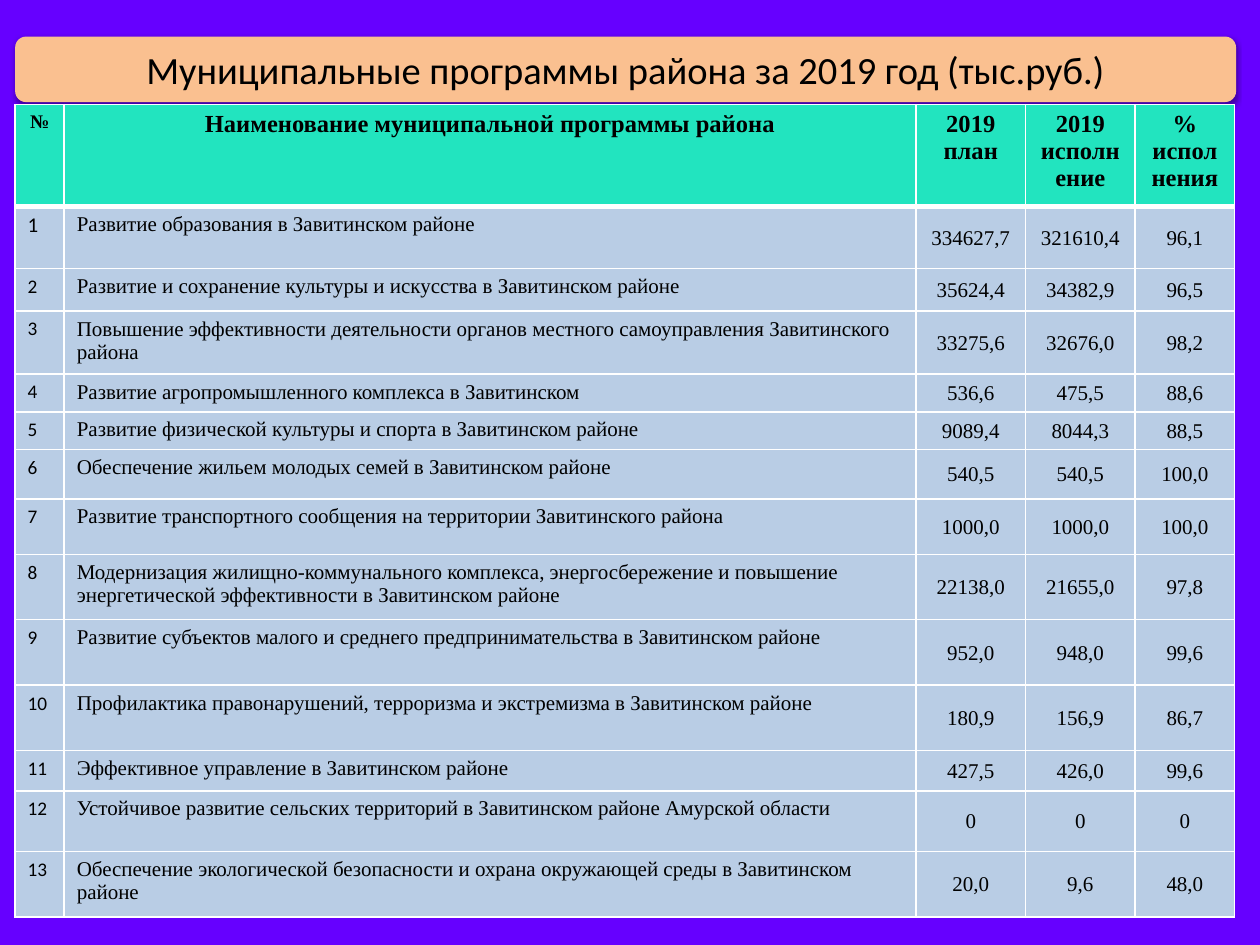
"""Build a slide with a table of district municipal programmes for 2019."""
from lxml import etree
from pptx import Presentation
from pptx import util as u
from pptx.dml.color import RGBColor
from pptx.enum import shapes, text
from pptx.oxml import ns

COLORS = {"back": "6600FF", "title": "FAC090", "head": "22E4BF",
          "body": "B9CDE5", "border": "FFFFFF", "text": "000000"}
SERIF, SANS = "Times New Roman", "Calibri"
TITLE = "Муниципальные программы района за 2019 год (тыс.руб.)"
HEADER = ("№", "Наименование муниципальной программы района",
          "2019 план", "2019 исполнение", "% исполнения")
PROGRAMS = [
    ("Развитие образования в Завитинском районе", "334627,7", "321610,4", "96,1"),
    ("Развитие и сохранение культуры и искусства в Завитинском районе", "35624,4", "34382,9", "96,5"),
    ("Повышение эффективности деятельности органов местного самоуправления Завитинского района",
     "33275,6", "32676,0", "98,2"),
    ("Развитие агропромышленного комплекса в Завитинском", "536,6", "475,5", "88,6"),
    ("Развитие физической культуры и спорта в Завитинском районе", "9089,4", "8044,3", "88,5"),
    ("Обеспечение жильем молодых семей в Завитинском районе", "540,5", "540,5", "100,0"),
    ("Развитие транспортного сообщения на территории Завитинского района", "1000,0", "1000,0", "100,0"),
    ("Модернизация жилищно-коммунального комплекса, энергосбережение и повышение "
     "энергетической эффективности в Завитинском районе", "22138,0", "21655,0", "97,8"),
    ("Развитие субъектов малого и среднего предпринимательства в Завитинском районе",
     "952,0", "948,0", "99,6"),
    ("Профилактика правонарушений, терроризма и экстремизма в Завитинском районе",
     "180,9", "156,9", "86,7"),
    ("Эффективное управление в Завитинском районе", "427,5", "426,0", "99,6"),
    ("Устойчивое развитие сельских территорий в Завитинском районе Амурской области", "0", "0", "0"),
    ("Обеспечение экологической безопасности и охрана окружающей среды в Завитинском районе",
     "20,0", "9,6", "48,0"),
]
COLS = (0.39, 6.76, 0.87, 0.87, 0.79)
ROWS = (0.81, 0.49, 0.34, 0.5, 0.3, 0.3, 0.39, 0.44, 0.52, 0.52, 0.52, 0.32, 0.48, 0.52)
LEFT, WIDTH = 0.12, 9.69
TITLE_TOP, TITLE_HEIGHT, TABLE_TOP = 0.29, 0.52, 0.83


def paint(fill, name):
    fill.solid()
    fill.fore_color.rgb = RGBColor.from_string(COLORS[name])


def write(tf, content, size, font=SERIF, bold=False, centered=True):
    tf.text = content
    p = tf.paragraphs[0]
    p.alignment = text.PP_ALIGN.CENTER if centered else text.PP_ALIGN.LEFT
    f = p.runs[0].font
    f.size, f.name, f.bold = u.Pt(size), font, bold
    f.color.rgb = RGBColor.from_string(COLORS["text"])


def add_border(cell, side, width):
    tc_pr = cell._tc.get_or_add_tcPr()
    ln = etree.SubElement(tc_pr, ns.qn(f"a:ln{side}"), w=str(u.Pt(width)))
    fill = etree.SubElement(ln, ns.qn("a:solidFill"))
    etree.SubElement(fill, ns.qn("a:srgbClr"), val=COLORS["border"])


def add_shadow(sp):
    sp.shadow.inherit = False
    effects = sp._element.spPr.find(ns.qn("a:effectLst"))
    shadow = etree.SubElement(effects, ns.qn("a:outerShdw"), blurRad=str(u.Pt(3.1)),
                              dist=str(u.Pt(1.6)), dir="5400000", rotWithShape="0")
    color = etree.SubElement(shadow, ns.qn("a:srgbClr"), val=COLORS["text"])
    etree.SubElement(color, ns.qn("a:alpha"), val="38000")


def add_title(s):
    sp = s.shapes.add_shape(shapes.MSO_SHAPE.ROUNDED_RECTANGLE, u.Inches(LEFT), u.Inches(TITLE_TOP),
                            u.Inches(WIDTH), u.Inches(TITLE_HEIGHT))
    paint(sp.fill, "title")
    sp.line.fill.background()
    add_shadow(sp)
    tf = sp.text_frame
    tf.word_wrap = True
    tf.vertical_anchor = text.MSO_ANCHOR.MIDDLE
    write(tf, TITLE, 22, SANS)


def fill_cell(cell, row, col, content):
    for side in "LRTB":
        thick = (row, side) in ((0, "B"), (1, "T"))
        add_border(cell, side, 3 if thick else 1)
    paint(cell.fill, "body" if row else "head")
    if row == 0:
        write(cell.text_frame, content, 14 if col else 11, bold=True)
    elif col == 0:
        write(cell.text_frame, content, 12 if row == 1 else 11, SANS, centered=False)
    else:
        write(cell.text_frame, content, 12, centered=col > 1)
    if row and col > 1:
        cell.vertical_anchor = text.MSO_ANCHOR.MIDDLE
        cell.margin_left = cell.margin_right = cell.margin_top = u.Inches(0.01)
        cell.margin_bottom = 0


def add_programs(s):
    records = [HEADER] + [(str(n), *program) for n, program in enumerate(PROGRAMS, 1)]
    table = s.shapes.add_table(len(ROWS), len(COLS), u.Inches(LEFT), u.Inches(TABLE_TOP),
                               u.Inches(WIDTH), u.Inches(sum(ROWS))).table
    table.horz_banding = False
    for column, width in zip(table.columns, COLS):
        column.width = u.Inches(width)
    for row, (height, record) in enumerate(zip(ROWS, records)):
        table.rows[row].height = u.Inches(height)
        for col, content in enumerate(record):
            fill_cell(table.cell(row, col), row, col, content)


def main():
    prs = Presentation()
    prs.slide_width, prs.slide_height = u.Inches(10), u.Inches(7.5)
    s = prs.slides.add_slide(prs.slide_layouts[6])
    paint(s.background.fill, "back")
    add_title(s)
    add_programs(s)
    prs.save("out.pptx")


if __name__ == "__main__":
    main()
